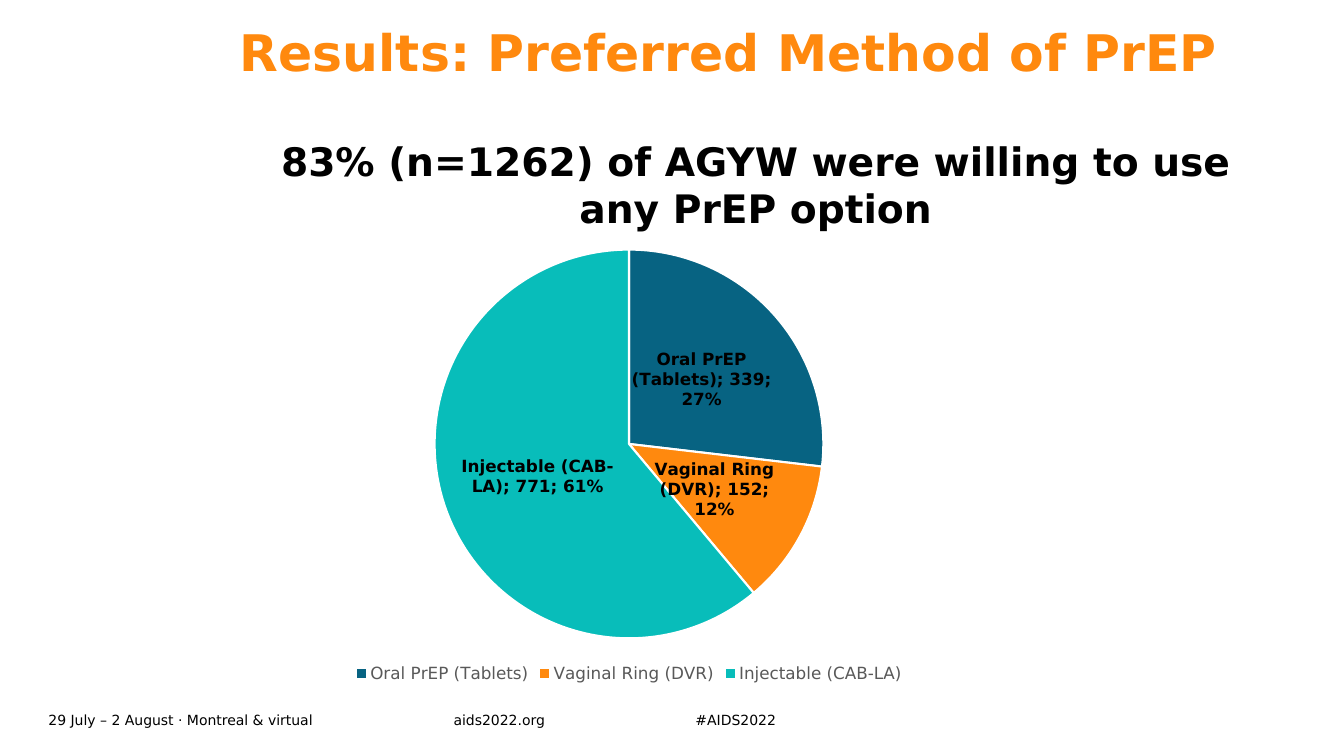
import pptx
import pptx.chart.data
import pptx.dml.color
import pptx.enum.chart
import pptx.enum.text
import pptx.oxml
import pptx.util

Pt = pptx.util.Pt
Align = pptx.enum.text.PP_ALIGN
Anchor = pptx.enum.text.MSO_ANCHOR

FONT = "DejaVu Sans"
TITLE = "Results: Preferred Method of PrEP"
HEADLINE = "83% (n=1262) of AGYW were willing to use any PrEP option"
METHODS = [
    ("Oral PrEP (Tablets)", 339, "076382"),
    ("Vaginal Ring (DVR)", 152, "FF890E"),
    ("Injectable (CAB-LA)", 771, "08BDBA"),
]
FOOTERS = [
    ("29 July – 2 August · Montreal & virtual", 34.6, 289.4),
    ("aids2022.org", 324, 139),
    ("#AIDS2022", 496.8, 139),
]


def color(value):
    return pptx.dml.color.RGBColor.from_string(value)


def style(font, size, shade="000000", bold=False):
    font.name = FONT
    font.size = Pt(size)
    font.bold = bold
    font.color.rgb = color(shade)


def add_text(page, text, left, top, width, height, size=10, shade="000000",
             bold=False, align=Align.LEFT, anchor=Anchor.TOP,
             inset=(0, 0), spacing=None):
    box = page.shapes.add_textbox(Pt(left), Pt(top), Pt(width), Pt(height))
    frame = box.text_frame
    frame.word_wrap = True
    frame.vertical_anchor = anchor
    frame.margin_left = frame.margin_right = Pt(inset[0])
    frame.margin_top = frame.margin_bottom = Pt(inset[1])
    para = frame.paragraphs[0]
    para.alignment = align
    para.line_spacing = spacing
    span = para.add_run()
    span.text = text
    style(span.font, size, shade, bold)


def add_pie(page, left, top, width, height):
    data = pptx.chart.data.CategoryChartData()
    data.categories = [name for name, count, shade in METHODS]
    data.add_series("Series 1", [count for name, count, shade in METHODS])
    chart = page.shapes.add_chart(
        pptx.enum.chart.XL_CHART_TYPE.PIE,
        Pt(left), Pt(top), Pt(width), Pt(height), data).chart
    style(chart.font, 10)
    chart.has_title = False
    chart.has_legend = True
    chart.legend.position = pptx.enum.chart.XL_LEGEND_POSITION.BOTTOM
    chart.legend.include_in_layout = False
    style(chart.legend.font, 12, "595959")

    plot = chart.plots[0]
    plot.vary_by_categories = True
    series = plot.series[0]
    for index, (name, count, shade) in enumerate(METHODS):
        slice_format = series.points[index].format
        slice_format.fill.solid()
        slice_format.fill.fore_color.rgb = color(shade)
        slice_format.line.color.rgb = color("FFFFFF")
        slice_format.line.width = Pt(1.5)

    labels = series.data_labels
    labels.show_value = True
    labels.show_category_name = True
    labels.show_percentage = True
    labels.position = pptx.enum.chart.XL_LABEL_POSITION.CENTER
    style(labels.font, 12, bold=True)
    separator = pptx.oxml.parse_xml(
        '<c:separator xmlns:c="http://schemas.openxmlformats.org/'
        'drawingml/2006/chart">; </c:separator>')
    series._element.xpath("c:dLbls/c:showBubbleSize")[0].addnext(separator)


def main():
    deck = pptx.Presentation()
    deck.slide_width, deck.slide_height = Pt(960), Pt(540)
    page = deck.slides.add_slide(deck.slide_layouts[6])
    for text, left, width in FOOTERS:
        add_text(page, text, left, 505.4, width, 17.3, anchor=Anchor.MIDDLE)
    add_text(page, TITLE, 171.4, 20.2, 755.3, 73.4, size=36, shade="FF890E",
             bold=True, spacing=0.9)
    add_pie(page, 193, 167.8, 512.6, 323.3)
    add_text(page, HEADLINE, 193, 94.3, 693.4, 74.9, size=28, bold=True,
             align=Align.CENTER, inset=(7.2, 3.6))
    deck.save("out.pptx")


if __name__ == "__main__":
    main()
